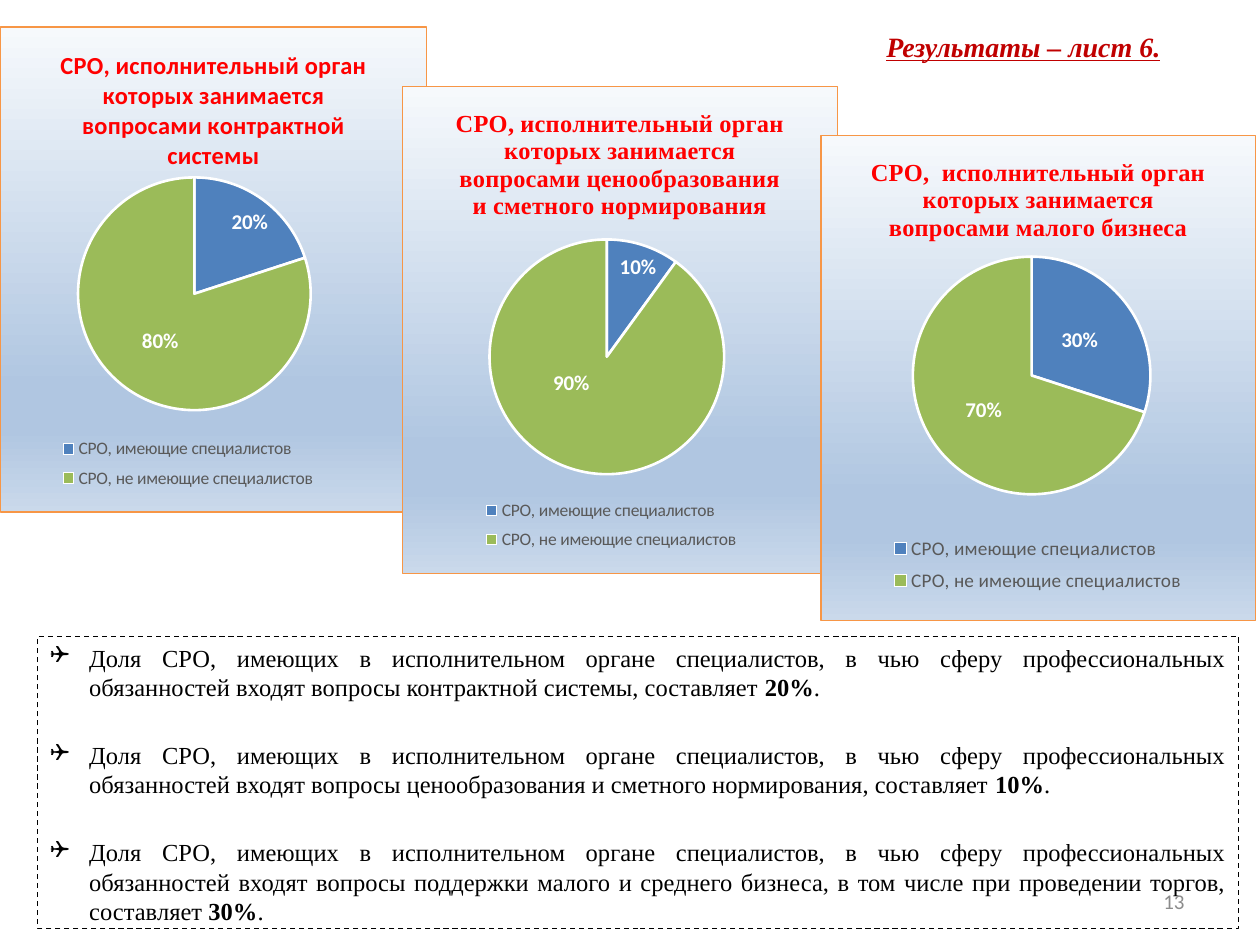
from dataclasses import dataclass

from lxml import etree
from pptx import Presentation
from pptx.chart.data import CategoryChartData
from pptx.dml.color import RGBColor
from pptx.enum import chart as chart_enum, dml, shapes, text
from pptx.oxml import parse_xml
from pptx.oxml.ns import nsdecls, qn
from pptx.util import Inches, Pt


@dataclass(frozen=True)
class Theme:
    serif: str = "Times New Roman"
    sans: str = "Calibri"
    black: str = "000000"
    white: str = "FFFFFF"
    heading: str = "C00000"
    chart_title: str = "FF0000"
    legend: str = "595959"
    muted: str = "8C8C8C"
    border: str = "F79646"
    slices: tuple = ("4F81BD", "9BBB59")
    panel: tuple = ((0, "F6F9FC"), (74, "B0C6E1"), (83, "B0C6E1"), (100, "CAD9EB"))
    heading_size: int = 16
    body_size: int = 14
    label_size: int = 12
    chart_size: int = 10


THEME = Theme()
CATEGORIES = ("СРО, имеющие специалистов", "СРО, не имеющие специалистов")


@dataclass(frozen=True)
class Pie:
    title: str
    title_font: str
    box: tuple
    share: float
    plot: tuple
    legend: tuple
    legend_size: int
    label_shifts: tuple = ()


PIES = (
    Pie("СРО, исполнительный орган которых занимается вопросами контрактной системы",
        THEME.sans, (0, 0.21, 3.39, 3.86), 0.2, (0.18, 0.31, 0.55, 0.48),
        (0.13, 0.83, 0.62, 0.14), 10, ((0.05, -0.05),)),
    Pie("СРО, исполнительный орган которых занимается вопросами ценообразования "
        "и сметного нормирования",
        THEME.serif, (3.19, 0.68, 3.46, 3.88), 0.1, (0.2, 0.3, 0.54, 0.51),
        (0.18, 0.83, 0.6, 0.14), 10, ((0.03, -0.07), (-0.04, -0.06))),
    Pie("СРО,  исполнительный орган которых занимается вопросами малого бизнеса",
        THEME.serif, (6.51, 1.07, 3.46, 3.86), 0.3, (0.21, 0.25, 0.55, 0.49),
        (0.16, 0.81, 0.68, 0.15), 11),
)

FINDINGS = (
    ("контрактной системы", "20%"),
    ("ценообразования и сметного нормирования", "10%"),
    ("поддержки малого и среднего бизнеса, в том числе при проведении торгов", "30%"),
)


def style_font(font, size, color, name, bold=False):
    font.size = Pt(size)
    font.color.rgb = RGBColor.from_string(color)
    font.name = name
    font.bold = bold


def add_run(paragraph, words, *style):
    run = paragraph.add_run()
    run.text = words
    style_font(run.font, *style)
    return run


def manual_layout(values, inner=False):
    """Return a c:layout with x, y and optionally w, h as fractions of the chart."""
    target = '<c:layoutTarget val="inner"/>' if inner else ""
    modes = '<c:xMode val="edge"/><c:yMode val="edge"/>' if len(values) == 4 else ""
    numbers = "".join(f'<c:{key} val="{value}"/>' for key, value in zip("xywh", values))
    return parse_xml(f'<c:layout {nsdecls("c")}><c:manualLayout>{target}{modes}{numbers}'
                     "</c:manualLayout></c:layout>")


def set_layout(parent, layout, before):
    """Replace the layout of a chart part, placed ahead of the first tag found."""
    for old in parent.findall(qn("c:layout")):
        parent.remove(old)
    follower = next(child for child in parent if child.tag in [qn(tag) for tag in before])
    follower.addprevious(layout)


def paint_panel(chart):
    stops = "".join(f'<a:gs pos="{at * 1000}"><a:srgbClr val="{color}"/></a:gs>'
                    for at, color in THEME.panel)
    chart.element.find(qn("c:chart")).addnext(parse_xml(
        f'<c:spPr {nsdecls("c", "a")}><a:gradFill><a:gsLst>{stops}</a:gsLst>'
        '<a:lin ang="5400000" scaled="0"/></a:gradFill>'
        f'<a:ln w="{Pt(0.75)}"><a:solidFill><a:srgbClr val="{THEME.border}"/>'
        "</a:solidFill></a:ln></c:spPr>"))


def format_slices(plot, pie):
    plot.vary_by_categories = True
    series = plot.series[0]
    for index, color in enumerate(THEME.slices):
        slice_format = series.points[index].format
        slice_format.fill.solid()
        slice_format.fill.fore_color.rgb = RGBColor.from_string(color)
        slice_format.line.color.rgb = RGBColor.from_string(THEME.white)
        slice_format.line.width = Pt(1.5)
    labels = series.data_labels
    labels.show_value = True
    labels.number_format = "0%"
    labels.number_format_is_linked = False
    labels.position = chart_enum.XL_LABEL_POSITION.CENTER
    style_font(labels.font, THEME.label_size, THEME.white, THEME.sans, True)
    for index, shift in enumerate(pie.label_shifts):
        label = series.points[index].data_label
        style_font(label.font, THEME.label_size, THEME.white, THEME.sans, True)
        label.position = chart_enum.XL_LABEL_POSITION.CENTER
    for element, shift in zip(labels._element.findall(qn("c:dLbl")), pie.label_shifts):
        element.find(qn("c:idx")).addnext(manual_layout(shift))
        element.find(qn("c:showPercent")).set("val", "0")
        element.find(qn("c:showCatName")).set("val", "0")


def add_pie(slide, pie):
    data = CategoryChartData(number_format="0%")
    data.categories = CATEGORIES
    data.add_series("Series 1", (pie.share, round(1 - pie.share, 2)))
    chart = slide.shapes.add_chart(chart_enum.XL_CHART_TYPE.PIE,
                                   *map(Inches, pie.box), data).chart
    style_font(chart.font, THEME.chart_size, THEME.black, THEME.sans)
    paint_panel(chart)
    chart.has_title = True
    add_run(chart.chart_title.text_frame.paragraphs[0], pie.title,
            THEME.body_size, THEME.chart_title, pie.title_font, True)
    chart.chart_title.include_in_layout = False
    chart.has_legend = True
    chart.legend.position = chart_enum.XL_LEGEND_POSITION.BOTTOM
    chart.legend.include_in_layout = False
    style_font(chart.legend.font, pie.legend_size, THEME.legend, THEME.sans)
    set_layout(chart.legend._element, manual_layout(pie.legend), ["c:overlay"])
    plot_area = chart.element.find(qn("c:chart")).find(qn("c:plotArea"))
    set_layout(plot_area, manual_layout(pie.plot, inner=True), ["c:pieChart"])
    format_slices(chart.plots[0], pie)


def add_heading(slide):
    title = slide.shapes.title
    title.left, title.top, title.width, title.height = map(Inches, (0.81, 0.21, 8.5, 0.31))
    title.text_frame.vertical_anchor = text.MSO_ANCHOR.MIDDLE
    paragraph = title.text_frame.paragraphs[0]
    paragraph.alignment = text.PP_ALIGN.RIGHT
    run = add_run(paragraph, "Результаты – лист 6.",
                  THEME.heading_size, THEME.heading, THEME.serif, True)
    run.font.italic = run.font.underline = True


def add_bullet(paragraph):
    properties = paragraph._p.get_or_add_pPr()
    properties.set("marL", str(Inches(0.31)))
    properties.set("indent", str(-Inches(0.31)))
    etree.SubElement(properties, qn("a:buFont"), typeface="Wingdings")
    etree.SubElement(properties, qn("a:buChar"), char="❑")


def add_findings(slide):
    box = slide.shapes.add_shape(shapes.MSO_SHAPE.RECTANGLE,
                                 *map(Inches, (0.3, 5.05, 9.53, 2.32)))
    box.shadow.inherit = False
    box.fill.background()
    box.line.color.rgb = RGBColor.from_string(THEME.black)
    box.line.width = Pt(0.75)
    box.line.dash_style = dml.MSO_LINE.DASH
    frame = box.text_frame
    frame.word_wrap = True
    frame.vertical_anchor = text.MSO_ANCHOR.TOP
    style = (THEME.body_size, THEME.black, THEME.serif)
    for index, (topic, share) in enumerate(FINDINGS):
        paragraph = frame.add_paragraph() if index else frame.paragraphs[0]
        paragraph.alignment = text.PP_ALIGN.JUSTIFY
        paragraph.line_spacing = Pt(16.8)
        paragraph.space_before = Pt(22 if index else 0)
        add_bullet(paragraph)
        add_run(paragraph, "Доля СРО, имеющих в исполнительном органе специалистов, в чью сферу "
                f"профессиональных обязанностей входят вопросы {topic}, составляет ", *style)
        add_run(paragraph, share, *style, True)
        add_run(paragraph, ".", *style)


def add_page_number(slide):
    frame = slide.shapes.add_textbox(*map(Inches, (7.17, 6.95, 2.33, 0.4))).text_frame
    frame.word_wrap = True
    frame.vertical_anchor = text.MSO_ANCHOR.MIDDLE
    frame.paragraphs[0].alignment = text.PP_ALIGN.RIGHT
    add_run(frame.paragraphs[0], "13", THEME.label_size, THEME.muted, THEME.sans)


def main():
    presentation = Presentation()
    presentation.slide_width, presentation.slide_height = Inches(10), Inches(7.5)
    slide = presentation.slides.add_slide(presentation.slide_layouts[5])
    add_heading(slide)
    add_findings(slide)
    for pie in PIES:
        add_pie(slide, pie)
    add_page_number(slide)
    presentation.save("out.pptx")


if __name__ == "__main__":
    main()
